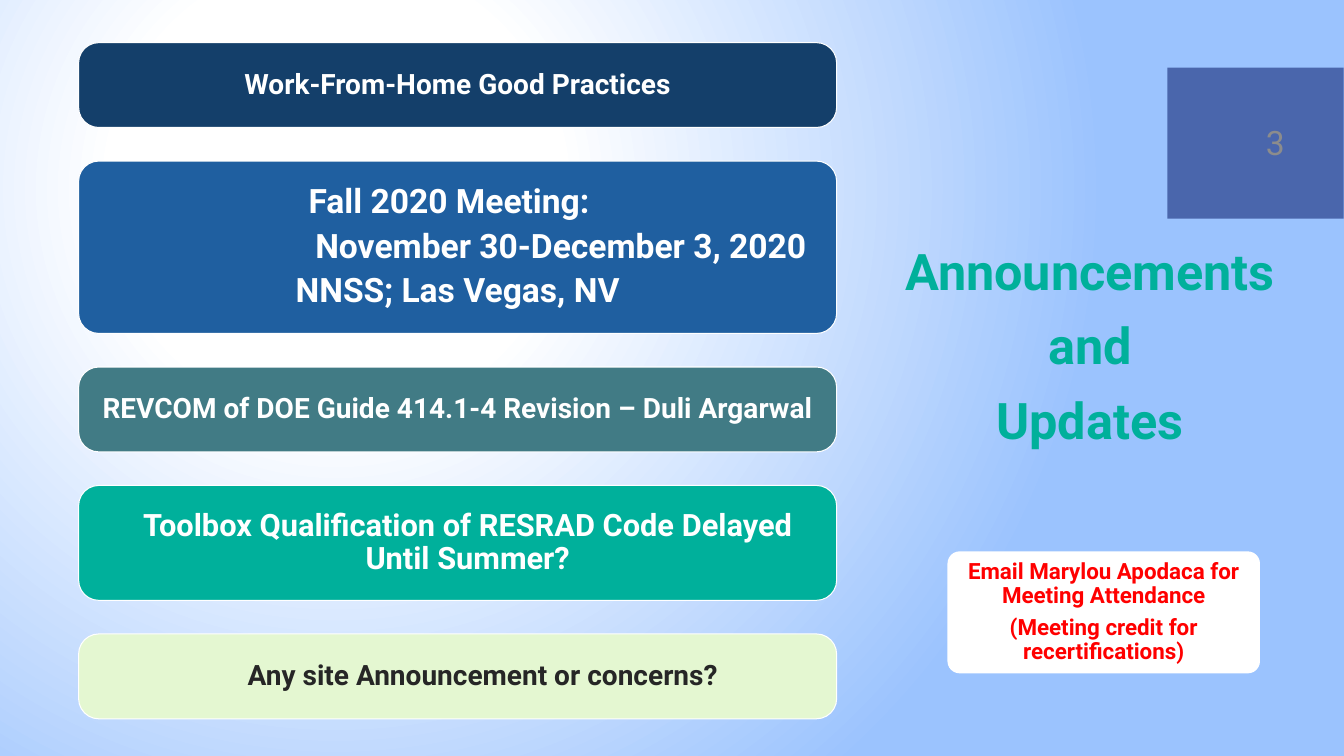
"""Build the announcements and updates slide."""
from dataclasses import dataclass

from lxml.etree import SubElement
from pptx import Presentation
from pptx.dml.color import RGBColor
from pptx.enum.shapes import MSO_SHAPE
from pptx.enum.text import MSO_ANCHOR, MSO_AUTO_SIZE, PP_ALIGN
from pptx.oxml.ns import qn
from pptx.util import Inches, Length, Pt


@dataclass(frozen=True)
class Theme:
    """Colours, font and type sizes."""
    font: str = "Roboto"
    white: str = "FFFFFF"
    sky: str = "9BC3FE"
    navy: str = "143F6A"
    blue: str = "1F5FA0"
    slate: str = "417B85"
    teal: str = "00B09B"
    lime: str = "E4F7D1"
    indigo: str = "4A66AC"
    ink: str = "262626"
    grey: str = "8C8C8C"
    red: str = "FF0000"
    heading: int = 36
    large: int = 24
    medium: int = 22
    normal: int = 20
    small: int = 16


THEME = Theme()


@dataclass(frozen=True)
class Area:
    """Place on a grid whose columns and rows are a tenth of an inch."""
    col: float
    row: float
    cols: float
    rows: float

    def box(self) -> tuple[Length, ...]:
        return tuple(grid(cells) for cells in (self.col, self.row, self.cols, self.rows))


@dataclass(frozen=True)
class Line:
    """One centred paragraph with optional side indents in grid cells."""
    text: str
    left: float = 0
    right: float = 0


@dataclass(frozen=True)
class Panel:
    """A rounded panel with its text."""
    rows: float
    fill: str
    lines: tuple[Line, ...]
    size: int = THEME.normal
    ink: str = THEME.white
    after: float = 6
    outlined: bool = True
    radius: float = 2


ANNOUNCEMENTS = (
    Panel(8.42, THEME.navy, (Line("Work-From-Home Good Practices"),)),
    Panel(17.1, THEME.blue, (
        Line("Fall 2020 Meeting:", right=1.7),
        Line("November 30-December 3, 2020", left=20.5),
        Line("NNSS; Las Vegas, NV"),
    ), size=THEME.large),
    Panel(8.42, THEME.slate, (Line("REVCOM of DOE Guide 414.1-4 Revision – Duli Argarwal"),)),
    Panel(11.4, THEME.teal, (
        Line("Toolbox Qualification of RESRAD Code Delayed Until Summer?", left=2),
    ), size=THEME.medium, after=7.7),
    Panel(8.42, THEME.lime, (Line("Any site Announcement or concerns?", left=5),),
          ink=THEME.ink, after=3),
)
ATTENDANCE = Panel(12.1, THEME.white, (
    Line("Email Marylou Apodaca for Meeting Attendance"),
    Line("(Meeting credit for recertifications)"),
), size=THEME.small, ink=THEME.red, after=5.6, outlined=False, radius=1.2)
STACK_COL, STACK_TOP, STACK_COLS, STACK_GAP = 7.8, 4.23, 75.2, 3.33


def grid(cells: float) -> Length:
    """Turn grid cells into a length."""
    return Inches(cells / 10)


def style(paragraph, size: int, colour: str, bold: bool = True) -> None:
    """Set the font of a paragraph."""
    font = paragraph.font
    font.name, font.size, font.bold = THEME.font, Pt(size), bold
    font.color.rgb = RGBColor.from_string(colour)


def paint_background(slide) -> None:
    """Fill the slide with a circular white-to-sky gradient."""
    fill = slide.background.fill
    fill.gradient()
    for stop, (position, colour) in zip(
            fill.gradient_stops, ((0.29, THEME.white), (1, THEME.sky))):
        stop.position = position
        stop.color.rgb = RGBColor.from_string(colour)
    gradient = next(slide.background._cSld.iter(qn("a:gradFill")))
    gradient.remove(gradient.find(qn("a:lin")))
    circle = SubElement(gradient, qn("a:path"), path="circle")
    SubElement(circle, qn("a:fillToRect"), l="50000", t="50000", r="100000", b="100000")


def add_block(slide, kind: MSO_SHAPE, area: Area, colour: str):
    """Add a flat filled shape without an outline."""
    block = slide.shapes.add_shape(kind, *area.box())
    block.shadow.inherit = False
    block.fill.solid()
    block.fill.fore_color.rgb = RGBColor.from_string(colour)
    block.line.fill.background()
    return block


def add_panel(slide, panel: Panel, col: float, row: float, cols: float) -> None:
    """Draw a rounded panel and write its lines."""
    block = add_block(slide, MSO_SHAPE.ROUNDED_RECTANGLE,
                      Area(col, row, cols, panel.rows), panel.fill)
    block.adjustments[0] = panel.radius / panel.rows
    if panel.outlined:
        block.line.color.rgb = RGBColor.from_string(THEME.white)
        block.line.width = Pt(0.75)
    frame = block.text_frame
    frame.word_wrap = True
    frame.vertical_anchor = MSO_ANCHOR.MIDDLE
    frame.margin_left = frame.margin_right = grid(1.5)
    frame.margin_top = frame.margin_bottom = grid(1.5)
    frame.text = "\n".join(line.text for line in panel.lines)
    for paragraph, line in zip(frame.paragraphs, panel.lines):
        properties = paragraph._p.get_or_add_pPr()
        properties.set("marL", str(grid(line.left)))
        properties.set("marR", str(grid(line.right)))
        paragraph.alignment = PP_ALIGN.CENTER
        paragraph.line_spacing = 0.9
        paragraph.space_after = Pt(panel.after)
        style(paragraph, panel.size, panel.ink)


def write_title(slide) -> None:
    """Place and format the slide title."""
    title = slide.shapes.title
    title.left, title.top, title.width, title.height = Area(86.5, 23.3, 43.3, 29.2).box()
    frame = title.text_frame
    frame.text = "Announcements\nand\nUpdates"
    frame.word_wrap = True
    frame.auto_size = MSO_AUTO_SIZE.NONE
    frame.vertical_anchor = MSO_ANCHOR.TOP
    for index, paragraph in enumerate(frame.paragraphs):
        paragraph.alignment = PP_ALIGN.CENTER
        paragraph.space_before = Pt(10 if index else 0)
        style(paragraph, THEME.heading, THEME.teal)


def add_page_number(slide) -> None:
    """Draw the page number on its block."""
    add_block(slide, MSO_SHAPE.RECTANGLE, Area(115.8, 6.7, 17.5, 15), THEME.indigo)
    number = slide.shapes.add_textbox(*Area(124.6, 11.4, 6.6, 5.4).box()).text_frame
    number.word_wrap = True
    number.vertical_anchor = MSO_ANCHOR.MIDDLE
    number.text = "3"
    style(number.paragraphs[0], THEME.large, THEME.grey, bold=False)


def main() -> None:
    """Build and save the presentation."""
    deck = Presentation()
    deck.slide_width, deck.slide_height = grid(133.33), grid(75)
    slide = deck.slides.add_slide(deck.slide_layouts.get_by_name("Title Only"))
    paint_background(slide)
    write_title(slide)
    add_page_number(slide)
    row = STACK_TOP
    for panel in ANNOUNCEMENTS:
        add_panel(slide, panel, STACK_COL, row, STACK_COLS)
        row += panel.rows + STACK_GAP
    add_panel(slide, ATTENDANCE, 94, 54.7, 31)
    deck.save("out.pptx")


if __name__ == "__main__":
    main()
